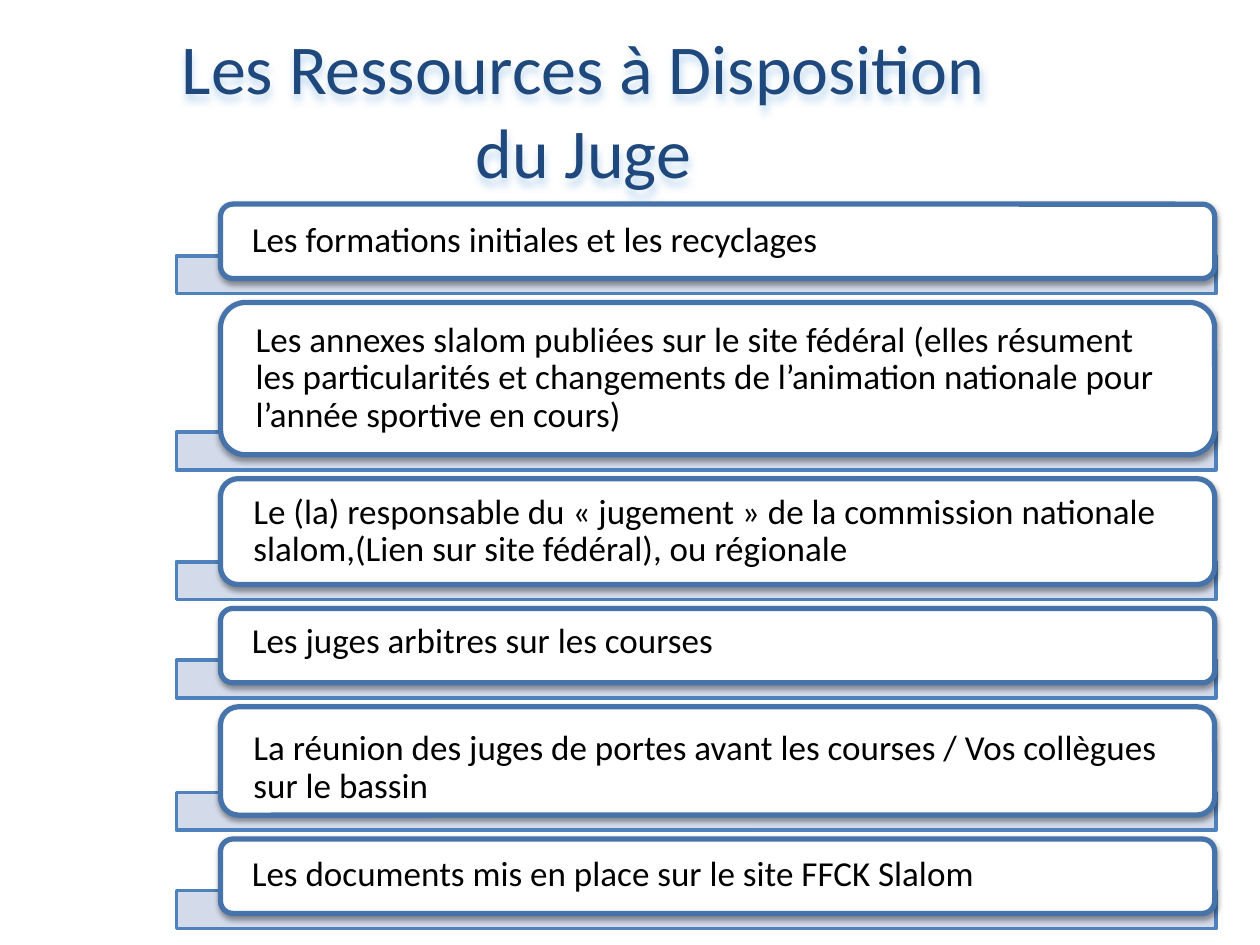
from dataclasses import dataclass

from lxml import etree
from pptx import Presentation
from pptx import util as u
from pptx.dml.color import RGBColor
from pptx.enum import shapes, text
from pptx.oxml import ns

NAVY = RGBColor(0x1F, 0x49, 0x7D)
BLUE = RGBColor(0x4F, 0x81, 0xBD)
STEEL = RGBColor(0x46, 0x74, 0xAA)
PALE = RGBColor(0xCF, 0xD7, 0xE7)
GLOW = RGBColor(0x9F, 0xC6, 0xEA)
WHITE = RGBColor(0xFF, 0xFF, 0xFF)
BLACK = RGBColor(0, 0, 0)

WIDTH, HEIGHT = u.Inches(10), u.Inches(7.5)
FONT = "Calibri"
FIRST_TOP, GAP = 21.6, 2.53
BAR_HEIGHT, BAR_OVERLAP = 4, 2.4
ONE_LINE = 7.87


@dataclass
class Resource:
    label: str
    height: float
    shift: float = 0


RESOURCES = [
    Resource("Les formations initiales et les recyclages", ONE_LINE),
    Resource("Les annexes slalom publiées sur le site fédéral (elles résument les "
             "particularités et changements de l’animation nationale pour l’année "
             "sportive en cours)", 16.13),
    Resource("Le (la) responsable du « jugement » de la commission nationale "
             "slalom,(Lien sur site fédéral), ou régionale", 11.2),
    Resource("Les juges arbitres sur les courses", ONE_LINE, -0.4),
    Resource("La réunion des juges de portes avant les courses / Vos collègues "
             "sur le bassin", 11.47, 0.73),
    Resource("Les documents mis en place sur le site FFCK Slalom", ONE_LINE, -0.13),
]


def across(percent: float) -> int:
    return round(WIDTH * percent / 100)


def down(percent: float) -> int:
    return round(HEIGHT * percent / 100)


def add_shadow(sp, color: RGBColor, alpha: int, blur: float, dist: float) -> None:
    sp.shadow.inherit = False
    effects = sp.element.spPr.find(ns.qn("a:effectLst"))
    shadow = etree.SubElement(effects, ns.qn("a:outerShdw"), blurRad=str(u.Pt(blur)),
                              dist=str(u.Pt(dist)), dir="5400000", rotWithShape="0")
    clr = etree.SubElement(shadow, ns.qn("a:srgbClr"), val=str(color))
    etree.SubElement(clr, ns.qn("a:alpha"), val=str(alpha * 1000))


def format_text(p, size: float, color: RGBColor) -> None:
    for r in p.runs:
        r.font.name, r.font.size = FONT, u.Pt(size)
        r.font.color.rgb = color


def add_title(s) -> None:
    sp = s.shapes.title
    sp.left, sp.top, sp.width, sp.height = across(12.2), down(1.6), across(68.2), down(19.87)
    tf = sp.text_frame
    tf.text = "Les Ressources à Disposition du Juge"
    tf.word_wrap = True
    tf.auto_size = text.MSO_AUTO_SIZE.NONE
    tf.vertical_anchor = text.MSO_ANCHOR.MIDDLE
    p = tf.paragraphs[0]
    p.alignment = text.PP_ALIGN.CENTER
    format_text(p, 40, NAVY)
    add_shadow(sp, GLOW, 60, 4, 3)


def add_block(s, kind, left: float, top: float, width: float, height: float,
              fill: RGBColor, line: RGBColor, weight: float):
    sp = s.shapes.add_shape(kind, across(left), down(top), across(width), down(height))
    sp.shadow.inherit = False
    sp.fill.solid()
    sp.fill.fore_color.rgb = fill
    sp.line.color.rgb = line
    sp.line.width = u.Pt(weight)
    return sp


def add_bar(s, top: float) -> None:
    sp = add_block(s, shapes.MSO_SHAPE.RECTANGLE, 14, top, 82.5, BAR_HEIGHT, PALE, BLUE, 2)
    clr = sp.element.spPr.find(ns.qn("a:solidFill"))[0]
    etree.SubElement(clr, ns.qn("a:alpha"), val="90000")


def add_card(s, item: Resource, top: float) -> None:
    sp = add_block(s, shapes.MSO_SHAPE.ROUNDED_RECTANGLE, 17.5, top, 78.9, item.height,
                   WHITE, STEEL, 3)
    add_shadow(sp, BLACK, 38, 3.1, 1.6)
    tf = sp.text_frame
    tf.text = item.label
    tf.word_wrap = True
    tf.vertical_anchor = text.MSO_ANCHOR.MIDDLE
    tf.margin_left = tf.margin_right = across(2.2)
    tf.margin_top = down(max(2 * item.shift, 0))
    tf.margin_bottom = down(max(-2 * item.shift, 0))
    p = tf.paragraphs[0]
    p.alignment = text.PP_ALIGN.LEFT
    p.line_spacing = 0.9
    format_text(p, 20, BLACK)


def main() -> None:
    prs = Presentation()
    prs.slide_width, prs.slide_height = WIDTH, HEIGHT
    s = prs.slides.add_slide(prs.slide_layouts[5])
    add_title(s)
    top = FIRST_TOP
    for item in RESOURCES:
        add_bar(s, top + item.height - BAR_OVERLAP)
        add_card(s, item, top)
        top += item.height + GAP
    prs.save("out.pptx")


if __name__ == "__main__":
    main()
